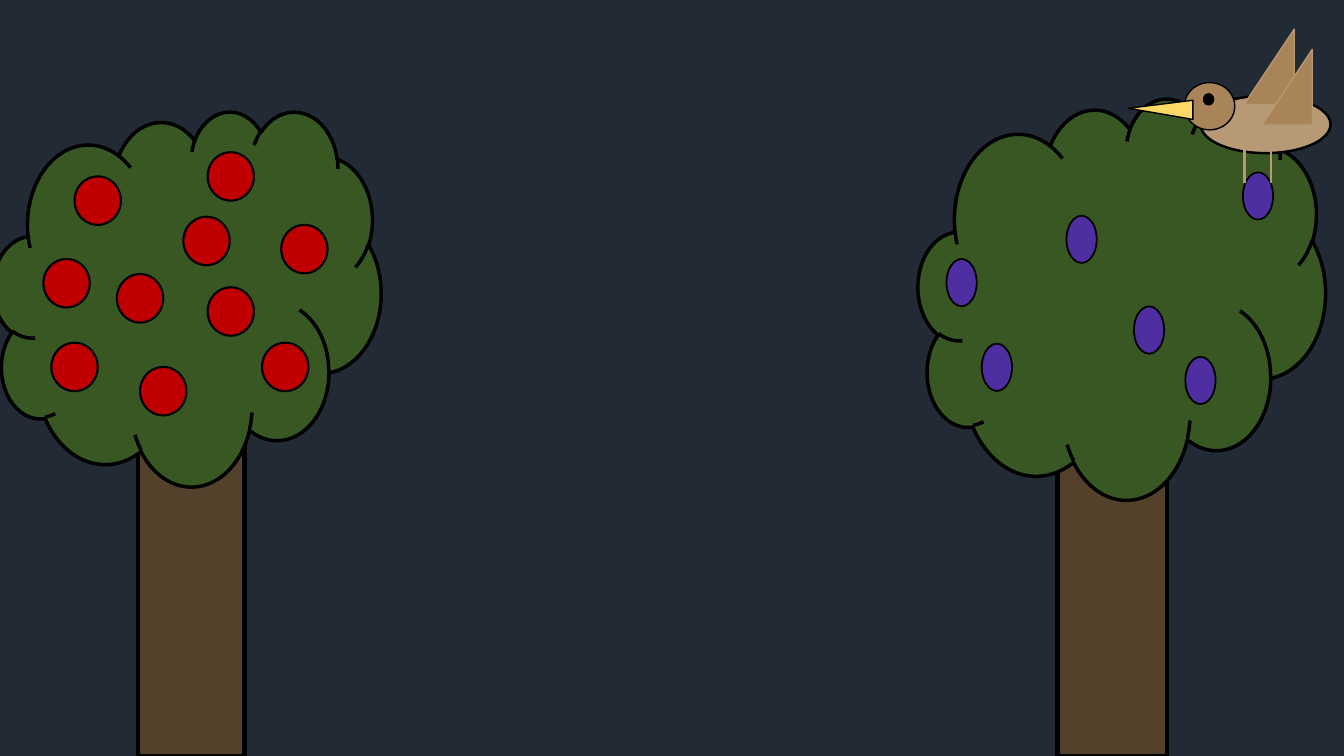
from lxml.etree import SubElement
from pptx import Presentation
from pptx.dml.color import RGBColor
from pptx.enum.shapes import MSO_CONNECTOR, MSO_SHAPE
from pptx.oxml.ns import qn
from pptx.util import Pt

COLORS = {
    "night": "222A35",
    "bark": "53412B",
    "leaf": "385723",
    "apple": "C00000",
    "plum": "4F2EA2",
    "body": "B79975",
    "wing": "A88458",
    "beak": "FFD966",
    "black": "000000",
}

APPLES = [
    (53.3, 126), (200.9, 160.6), (148.3, 108.7), (36.7, 244.8),
    (187.2, 244.8), (83.5, 195.8), (131, 154.8), (148.3, 205.2),
    (100.1, 262.1), (31, 185),
]
PLUMS = [
    (676.1, 185), (761.8, 154.1), (701.3, 245.5),
    (846.7, 254.9), (887.8, 123.1), (810, 218.9),
]


def color(name):
    return RGBColor.from_string(COLORS[name])


def add_form(slide, kind, box, fill, width, line="black", flip=False):
    form = slide.shapes.add_shape(kind, *map(Pt, box))
    form.shadow.inherit = False
    form.fill.solid()
    form.fill.fore_color.rgb = color(fill)
    form.line.color.rgb = color(line)
    form.line.width = Pt(width)
    if flip:
        form.element.spPr.find(qn("a:xfrm")).set("flipH", "1")
    return form


def add_tree(slide, trunk, crown, width):
    add_form(slide, MSO_SHAPE.RECTANGLE, trunk, "bark", width)
    add_form(slide, MSO_SHAPE.CLOUD, crown, "leaf", 2.5)


def add_fruits(slide, spots, size, fill, width):
    for spot in spots:
        add_form(slide, MSO_SHAPE.OVAL, spot + size, fill, width)


def add_leg(slide, left, width):
    leg = slide.shapes.add_connector(
        MSO_CONNECTOR.STRAIGHT, Pt(left), Pt(95), Pt(left), Pt(131))
    leg.line.color.rgb = color("body")
    leg.line.width = Pt(width)
    SubElement(leg.element.spPr, qn("a:effectLst"))


def add_bird(slide):
    add_form(slide, MSO_SHAPE.OVAL, (857.5, 68.4, 92.9, 41), "body", 1.75)
    add_form(slide, MSO_SHAPE.OVAL, (846, 59, 36, 33.8), "wing", 1)
    beak = add_form(slide, MSO_SHAPE.ISOSCELES_TRIANGLE,
                    (822.2, 55.4, 13.7, 46.1), "beak", 1, flip=True)
    beak.rotation = 270
    beak.adjustments[0] = 0.42
    for left, top in ((888.5, 20.9), (901.4, 35.3)):
        add_form(slide, MSO_SHAPE.RIGHT_TRIANGLE, (left, top, 36, 54),
                 "wing", 1, line="body", flip=True)
    add_leg(slide, 889.2, 2.25)
    add_leg(slide, 907.9, 1.75)
    add_form(slide, MSO_SHAPE.OVAL, (859.7, 67, 7.2, 7.9), "black", 1)


def main():
    deck = Presentation()
    deck.slide_width, deck.slide_height = Pt(960), Pt(540)
    slide = deck.slides.add_slide(deck.slide_layouts[6])
    slide.background.fill.solid()
    slide.background.fill.fore_color.rgb = color("night")

    add_tree(slide, (98.6, 244.8, 76.3, 295.2), (-5, 79.2, 277.2, 267.8), 3.25)
    add_fruits(slide, APPLES, (33.1, 34.6), "apple", 1.5)
    add_tree(slide, (755.3, 287.3, 78.5, 252.7), (655.9, 69.8, 290.9, 286.6), 3)
    add_fruits(slide, PLUMS, (21.6, 33.8), "plum", 1.25)
    add_bird(slide)
    deck.save("out.pptx")


if __name__ == "__main__":
    main()
